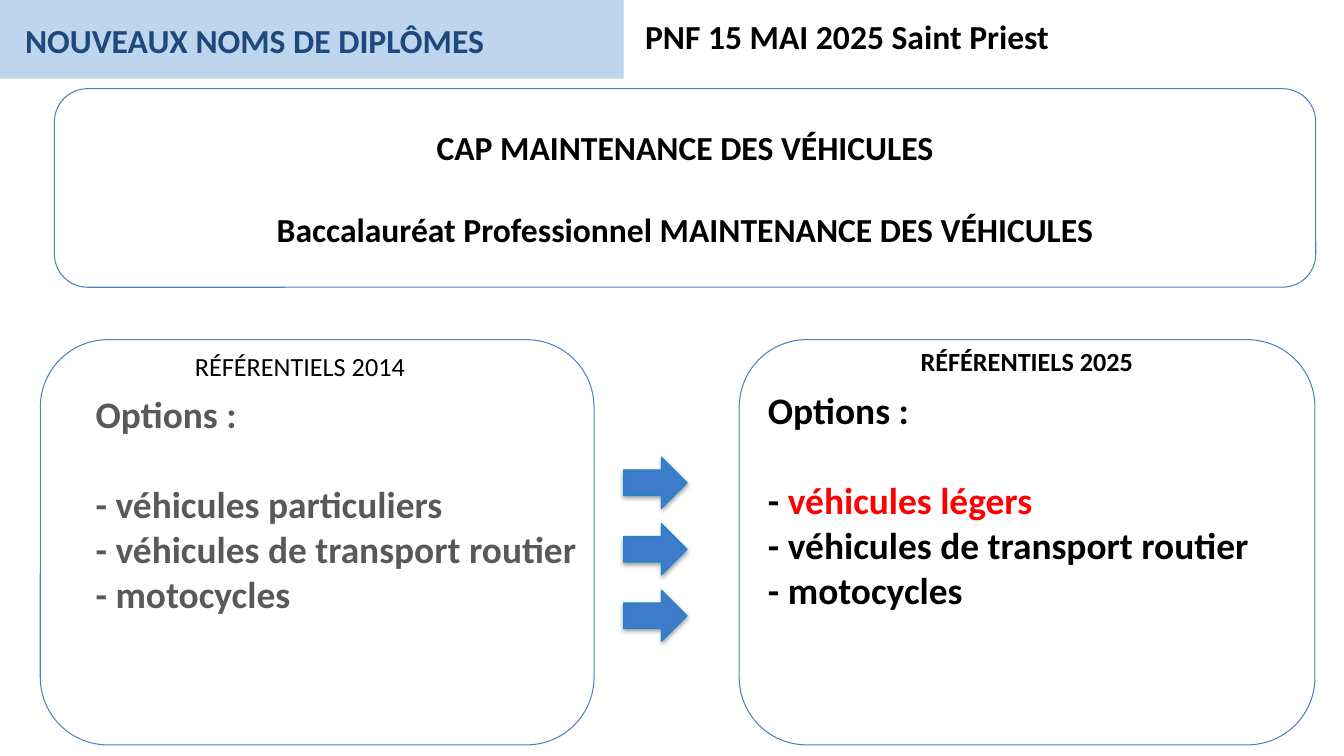
from dataclasses import dataclass

from lxml import etree
from pptx import Presentation
from pptx.dml.color import RGBColor
from pptx.enum.shapes import MSO_SHAPE
from pptx.enum.text import MSO_ANCHOR, PP_ALIGN
from pptx.oxml.ns import qn
from pptx.util import Inches, Pt

RECT = MSO_SHAPE.RECTANGLE
ROUNDED = MSO_SHAPE.ROUNDED_RECTANGLE
ARROW = MSO_SHAPE.RIGHT_ARROW
LEFT, CENTER = PP_ALIGN.LEFT, PP_ALIGN.CENTER
TOP, MIDDLE = MSO_ANCHOR.TOP, MSO_ANCHOR.MIDDLE


@dataclass(frozen=True)
class Theme:
    font: str = "Calibri"
    black: str = "000000"
    white: str = "FFFFFF"
    navy: str = "1F497D"
    sky: str = "BDD6EE"
    outline: str = "4F81BD"
    arrow: str = "3D7CC9"
    arrow_edge: str = "1A86D0"
    grey: str = "595959"
    red: str = "FF0000"
    heading: float = 24
    options: float = 26.7
    caption: float = 18.7
    line: float = 0.75


class Board:
    def __init__(self, deck, theme):
        self.deck = deck
        self.theme = theme
        self.slide = deck.slides.add_slide(deck.slide_layouts[6])

    def place(self, share):
        left, top, width, height = share
        wide, high = self.deck.slide_width, self.deck.slide_height
        return [round(part * full / 100) for part, full in
                ((left, wide), (top, high), (width, wide), (height, high))]

    def shape(self, kind, share, fill=None, line=None):
        shape = self.slide.shapes.add_shape(kind, *self.place(share))
        shape.shadow.inherit = False
        if fill:
            shape.fill.solid()
            shape.fill.fore_color.rgb = RGBColor.from_string(fill)
        else:
            shape.fill.background()
        if line:
            shape.line.color.rgb = RGBColor.from_string(line)
            shape.line.width = Pt(self.theme.line)
        else:
            shape.line.fill.background()
        return shape

    def letter(self, holder, lines, size, bold=True, align=LEFT, anchor=TOP, gap=0):
        frame = holder.text_frame
        frame.word_wrap = True
        frame.vertical_anchor = anchor
        for index, pieces in enumerate(lines):
            paragraph = frame.paragraphs[0] if index == 0 else frame.add_paragraph()
            paragraph.alignment = align
            if index == 1 and gap:
                paragraph.space_before = Pt(gap)
            for words, color in pieces:
                run = paragraph.add_run()
                run.text = words
                run.font.name = self.theme.font
                run.font.size = Pt(size)
                run.font.bold = bold
                run.font.color.rgb = RGBColor.from_string(color)

    def text(self, share, lines, size, **style):
        self.letter(self.slide.shapes.add_textbox(*self.place(share)), lines, size, **style)

    def arrow(self, share):
        arrow = self.shape(ARROW, share, self.theme.arrow, self.theme.arrow_edge)
        effects = arrow._element.spPr.find(qn("a:effectLst"))
        shadow = etree.SubElement(effects, qn("a:outerShdw"), blurRad=str(Pt(3.1)),
                                  dist=str(Pt(1.8)), dir="5400000", rotWithShape="0")
        tint = etree.SubElement(shadow, qn("a:srgbClr"), val=self.theme.black)
        etree.SubElement(tint, qn("a:alpha"), val="35000")

    def options(self, panel, caption, bold, caption_at, list_at, lines):
        theme = self.theme
        self.shape(ROUNDED, panel, line=theme.outline)
        self.text((*caption_at, 20.48, 5.6), [[(caption, theme.black)]],
                  theme.caption, bold=bold, align=CENTER)
        self.text((*list_at, 40.5, 31.33), lines, theme.options, gap=32.5)


def main():
    theme = Theme()
    deck = Presentation()
    deck.slide_width, deck.slide_height = Inches(13.33), Inches(7.5)
    board = Board(deck, theme)

    board.shape(RECT, (0, 0, 46.4, 10.4), fill=theme.sky)
    event = board.shape(RECT, (47.26, 1.47, 31.7, 6.67), fill=theme.white)
    board.letter(event, [[("PNF 15 MAI 2025 Saint Priest", theme.black)]], theme.heading)
    board.text((1.13, 2, 42.46, 6.67), [[("NOUVEAUX NOMS DE DIPLÔMES", theme.navy)]],
               theme.heading)

    diplomas = board.shape(ROUNDED, (4.05, 11.73, 93.85, 26.27), line=theme.outline)
    board.letter(diplomas, [
        [("CAP MAINTENANCE DES VÉHICULES", theme.black)],
        [("Baccalauréat Professionnel MAINTENANCE DES VÉHICULES", theme.black)],
    ], theme.heading, align=CENTER, anchor=MIDDLE, gap=29.3)

    def option_lines(color, first, first_color):
        return [
            [("Options :", color)],
            [("- ", color), (first, first_color)],
            [("- véhicules de transport routier", color)],
            [("- motocycles", color)],
        ]

    board.options((3, 44.93, 41.2, 53.6), "RÉFÉRENTIELS 2014", False,
                  (12.08, 45.73), (6.38, 51.07),
                  option_lines(theme.grey, "véhicules particuliers", theme.grey))
    board.options((55, 44.93, 42.84, 53.6), "RÉFÉRENTIELS 2025", True,
                  (66.17, 45.07), (56.4, 50.53),
                  option_lines(theme.black, "véhicules légers", theme.red))

    for row in range(3):
        board.arrow((46.4, 60.45 + 8.8 * row, 4.73, 6.8))

    deck.save("out.pptx")


if __name__ == "__main__":
    main()
